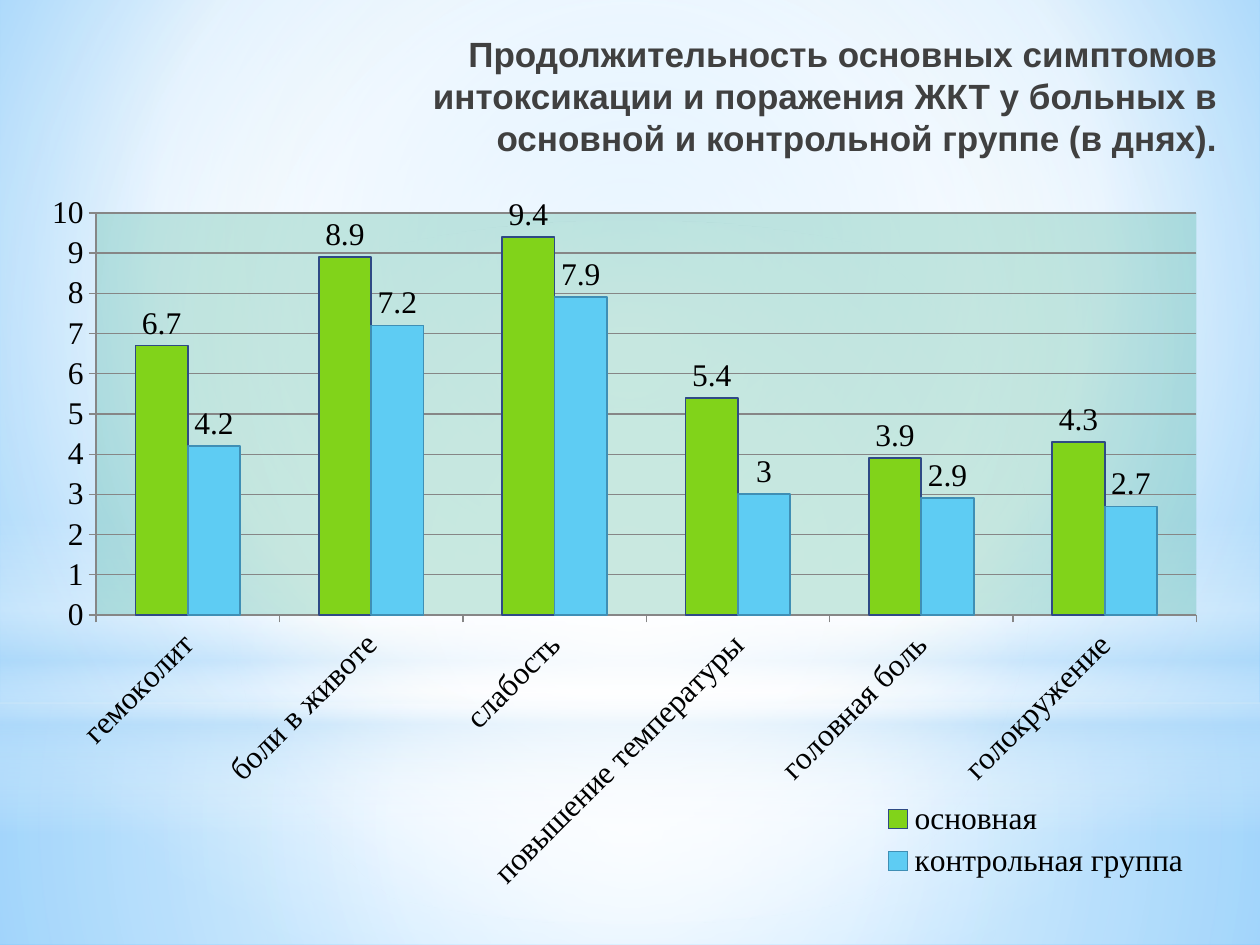
"""Build a slide comparing symptom duration in two patient groups."""
import dataclasses

import pptx
import pptx.chart.data
import pptx.dml.color
import pptx.enum.chart
import pptx.enum.shapes
import pptx.enum.text
import pptx.oxml
import pptx.oxml.ns
import pptx.util

Inches = pptx.util.Inches
Pt = pptx.util.Pt
qn = pptx.oxml.ns.qn
Shape = pptx.enum.shapes.MSO_SHAPE


@dataclasses.dataclass(frozen=True)
class Theme:
    """Hold the colours, fonts and type sizes."""
    white: str = "FFFFFF"
    pale: str = "B4DCFA"
    sky: str = "9ED5FF"
    deep: str = "5BB9FF"
    title: str = "404040"
    ink: str = "000000"
    grid: str = "868686"
    plot: str = "34AC8B"
    bars: tuple = (("81D31A", "2F4A85"), ("5ECCF3", "3F8FB5"))
    head_font: str = "Arial"
    body_font: str = "Times New Roman"
    head_size: int = 20
    body_size: int = 18


THEME = Theme()
CENTER = (50, 50, 50, 50)
LABELS = ("гемоколит", "боли в животе", "слабость",
          "повышение температуры", "головная боль", "голокружение")
GROUPS = {
    "основная": (6.7, 8.9, 9.4, 5.4, 3.9, 4.3),
    "контрольная группа": (4.2, 7.2, 7.9, 3, 2.9, 2.7),
}


def color(code):
    """Turn a hex code into a colour."""
    return pptx.dml.color.RGBColor.from_string(code)


def make(tag, body, *spaces):
    """Parse an element with the namespaces it needs."""
    names = pptx.oxml.ns.nsdecls(*spaces)
    return pptx.oxml.parse_xml(f"<{tag} {names}>{body}</{tag}>")


def tint(code, alpha=100):
    """Return colour markup with an opacity in percent."""
    return f'<a:srgbClr val="{code}"><a:alpha val="{alpha * 1000}"/></a:srgbClr>'


def blend(props, stops, focus=None):
    """Swap a solid fill for a gradient, round when it has a focus."""
    marks = "".join(f'<a:gs pos="{spot * 1000}">{tint(*shade)}</a:gs>'
                    for spot, *shade in stops)
    if focus:
        sides = " ".join(f'{side}="{part * 1000}"'
                         for side, part in zip("ltrb", focus))
        form = f'<a:path path="circle"><a:fillToRect {sides}/></a:path>'
    else:
        form = '<a:lin ang="5400000" scaled="0"/>'
    solid = props.find(qn("a:solidFill"))
    body = f"<a:gsLst>{marks}</a:gsLst>{form}"
    props.replace(solid, make("a:gradFill", body, "a"))


def add_glow(slide, kind, top, height, stops, focus=None):
    """Add a full-width soft gradient shape."""
    glow = slide.shapes.add_shape(
        kind, 0, Inches(top), Inches(10), Inches(height))
    glow.shadow.inherit = False
    glow.line.fill.background()
    glow.fill.solid()
    blend(glow.element.spPr, stops, focus)


def add_sky(slide):
    """Paint the background and its layers of light."""
    white, pale = THEME.white, THEME.pale
    slide.background.fill.solid()
    blend(slide.element.find(".//" + qn("p:bgPr")),
          ((0, THEME.sky), (60, white), (100, THEME.deep)), (20, 10, 20, 60))
    add_glow(slide, Shape.RECTANGLE, 5.58, 1.92,
             ((0, white, 91), (37, white, 76), (100, pale, 79)), CENTER)
    add_glow(slide, Shape.RECTANGLE, 0, 5.58,
             ((0, white, 89), (48, white, 62), (100, pale, 79)), CENTER)
    add_glow(slide, Shape.RECTANGLE, 4.12, 2.5,
             ((0, white, 0), (29, white, 30), (45, pale, 40),
              (55, white, 26), (65, pale, 60), (100, white, 0)))
    add_glow(slide, Shape.OVAL, 1.75, 5.58,
             ((0, white), (56, white, 0)), CENTER)


def add_title(slide, text):
    """Add the heading, set to the right."""
    box = slide.shapes.add_textbox(
        Inches(2.64), Inches(0.21), Inches(7.12), Inches(1.25))
    box.text_frame.word_wrap = True
    line = box.text_frame.paragraphs[0]
    line.text = text
    line.alignment = pptx.enum.text.PP_ALIGN.RIGHT
    line.font.name = THEME.head_font
    line.font.size = Pt(THEME.head_size)
    line.font.bold = True
    line.font.color.rgb = color(THEME.title)


def layout(left, top, width, height, inner=False):
    """Return a manual chart layout in fractions of the chart."""
    target = '<c:layoutTarget val="inner"/>' if inner else ""
    modes = '<c:xMode val="edge"/><c:yMode val="edge"/>'
    spots = "".join(f'<c:{key} val="{part}"/>' for key, part in
                    zip("xywh", (left, top, width, height)))
    body = f"<c:manualLayout>{target}{modes}{spots}</c:manualLayout>"
    return make("c:layout", body, "c")


def clear(parent):
    """Remove any layout that a chart part has."""
    for old in parent.findall(qn("c:layout")):
        parent.remove(old)


def style_axis(axis):
    """Give an axis grey lines and outer ticks."""
    axis.format.line.color.rgb = color(THEME.grid)
    axis.major_tick_mark = pptx.enum.chart.XL_TICK_MARK.OUTSIDE
    axis.minor_tick_mark = pptx.enum.chart.XL_TICK_MARK.NONE


def style_bars(series, fill, edge):
    """Colour one series and show its values."""
    series.format.fill.solid()
    series.format.fill.fore_color.rgb = color(fill)
    series.format.line.color.rgb = color(edge)
    series.format.line.width = Pt(1)
    tags = series.data_labels
    tags.show_value = True
    tags.position = pptx.enum.chart.XL_LABEL_POSITION.OUTSIDE_END


def place_plot(chart):
    """Set the plot area's place and its clear green fill."""
    area = chart.element.find(".//" + qn("c:plotArea"))
    clear(area)
    area.insert(0, layout(0.052, 0.025, 0.94, 0.571, inner=True))
    fill = f"<a:solidFill>{tint(THEME.plot, 26)}</a:solidFill>"
    area.append(make("c:spPr", fill, "c", "a"))


def place_legend(chart):
    """Put the legend below the plot on the right."""
    chart.has_legend = True
    chart.legend.position = pptx.enum.chart.XL_LEGEND_POSITION.RIGHT
    chart.legend.include_in_layout = False
    key = chart.element.find(".//" + qn("c:legend"))
    clear(key)
    key.find(qn("c:legendPos")).addnext(layout(0.72, 0.85, 0.27, 0.13))


def add_graph(slide):
    """Add the column chart of both groups."""
    data = pptx.chart.data.CategoryChartData()
    data.categories = LABELS
    for name, days in GROUPS.items():
        data.add_series(name, days)
    chart = slide.shapes.add_chart(
        pptx.enum.chart.XL_CHART_TYPE.COLUMN_CLUSTERED, Inches(0.28),
        Inches(1.55), Inches(9.29), Inches(5.59), data).chart
    chart.has_title = False
    chart.font.name = THEME.body_font
    chart.font.size = Pt(THEME.body_size)
    chart.font.color.rgb = color(THEME.ink)
    plot = chart.plots[0]
    plot.vary_by_categories = False
    plot.gap_width = 150
    plot.overlap = 0
    for series, shades in zip(plot.series, THEME.bars):
        style_bars(series, *shades)
    days, names = chart.value_axis, chart.category_axis
    style_axis(days)
    style_axis(names)
    days.minimum_scale, days.maximum_scale, days.major_unit = 0, 10, 1
    days.major_gridlines.format.line.color.rgb = color(THEME.grid)
    names.tick_labels.font.size = Pt(THEME.body_size)
    turn = names.format.line and chart.element.find(".//" + qn("c:catAx"))
    turn.find(qn("c:txPr")).find(qn("a:bodyPr")).set("rot", "-2700000")
    place_plot(chart)
    place_legend(chart)


def main():
    """Build and save the slide."""
    deck = pptx.Presentation()
    deck.slide_width, deck.slide_height = Inches(10), Inches(7.5)
    slide = deck.slides.add_slide(deck.slide_layouts[6])
    add_sky(slide)
    add_title(slide, "Продолжительность основных симптомов интоксикации и "
                     "поражения ЖКТ у больных в основной и контрольной "
                     "группе (в днях).")
    add_graph(slide)
    deck.save("out.pptx")


if __name__ == "__main__":
    main()
